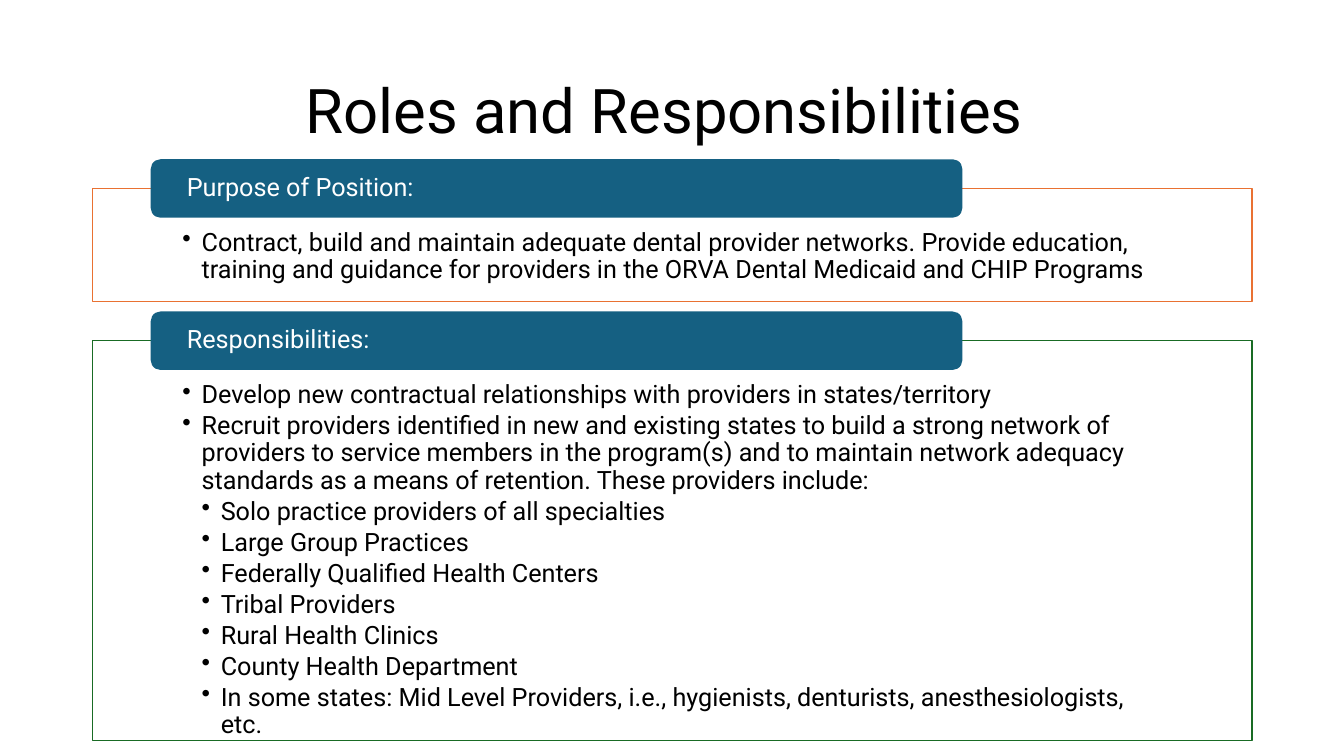
from lxml import etree
from pptx import Presentation
from pptx.dml.color import RGBColor
from pptx.enum.shapes import MSO_SHAPE
from pptx.enum.text import MSO_ANCHOR, MSO_AUTO_SIZE, PP_ALIGN
from pptx.oxml.ns import qn
from pptx.util import Inches, Pt

RECT, ROUNDED = MSO_SHAPE.RECTANGLE, MSO_SHAPE.ROUNDED_RECTANGLE
TOP, MIDDLE = MSO_ANCHOR.TOP, MSO_ANCHOR.MIDDLE
LEFT, CENTER = PP_ALIGN.LEFT, PP_ALIGN.CENTER

COLORS = {"white": "FFFFFF", "black": "000000", "label": "156082",
          "purpose": "E97132", "duties": "196B24"}
FONT = "Roboto"

# Grid in inches: both panels share one column, labels straddle their top edge
MARGIN, PANEL_W = 0.92, 11.5
LABEL_X, LABEL_W, LABEL_H = MARGIN + 0.05 * PANEL_W, 0.7 * PANEL_W, 0.58
BULLET_STEP = 0.19

# Heading, colour, top, height, bullets as (level, text)
SECTIONS = [
    ("Purpose of Position:", "purpose", 1.87, 1.12, [
        (1, "Contract, build and maintain adequate dental provider networks. "
            "Provide education, training and guidance for providers in the "
            "ORVA Dental Medicaid and CHIP Programs"),
    ]),
    ("Responsibilities:", "duties", 3.38, 3.97, [
        (1, "Develop new contractual relationships with providers in states/territory"),
        (1, "Recruit providers identified in new and existing states to build a "
            "strong network of providers to service members in the program(s) and "
            "to maintain network adequacy standards as a means of retention. "
            "These providers include:"),
        (2, "Solo practice providers of all specialties"),
        (2, "Large Group Practices"),
        (2, "Federally Qualified Health Centers"),
        (2, "Tribal Providers"),
        (2, "Rural Health Clinics"),
        (2, "County Health Department"),
        (2, "In some states: Mid Level Providers, i.e., hygienists, denturists, "
            "anesthesiologists, etc."),
    ]),
]


def color(name):
    return RGBColor.from_string(COLORS[name])


def write(p, text, size=18, fill="black", align=LEFT, after=0, level=0):
    """Fill one paragraph; a level above 0 gives it a bullet."""
    p.alignment, p.line_spacing, p.space_after = align, 0.9, Pt(after)
    if level:
        p.level = level
        pPr = p._p.get_or_add_pPr()
        pPr.set("marL", str(Inches(level * BULLET_STEP)))
        pPr.set("indent", str(-Inches(BULLET_STEP)))
        etree.SubElement(pPr, qn("a:buChar"), char="•")
    r = p.add_run()
    r.text = text
    r.font.name, r.font.size, r.font.color.rgb = FONT, Pt(size), color(fill)


def set_frame(tf, anchor, side, top=0, bottom=0):
    tf.word_wrap, tf.vertical_anchor = True, anchor
    tf.auto_size = MSO_AUTO_SIZE.NONE
    tf.margin_left = tf.margin_right = Inches(side)
    tf.margin_top, tf.margin_bottom = Inches(top), Inches(bottom)


def add_box(s, kind, x, y, w, h, fill, line=None):
    sp = s.shapes.add_shape(kind, Inches(x), Inches(y), Inches(w), Inches(h))
    sp.shadow.inherit = False
    sp.fill.solid()
    sp.fill.fore_color.rgb = color(fill)
    if line:
        sp.line.color.rgb, sp.line.width = color(line), Pt(1)
    else:
        sp.line.fill.background()
    return sp


def add_title(s, text):
    sp = s.shapes.title
    sp.left, sp.top = Inches(MARGIN), Inches(0.4)
    sp.width, sp.height = Inches(PANEL_W), Inches(1.45)
    set_frame(sp.text_frame, MIDDLE, side=0.1, top=0.05, bottom=0.05)
    write(sp.text_frame.paragraphs[0], text, size=44, align=CENTER)


def add_section(s, heading, line, top, height, bullets):
    # Outlined panel with its bullet list
    tf = add_box(s, RECT, MARGIN, top, PANEL_W, height, "white", line).text_frame
    set_frame(tf, TOP, side=0.89, top=0.41, bottom=0.14)
    for i, (level, text) in enumerate(bullets):
        p = tf.add_paragraph() if i else tf.paragraphs[0]
        write(p, text, after=2.7, level=level)
    # Heading label centred on the panel's top edge
    tf = add_box(s, ROUNDED, LABEL_X, top - LABEL_H / 2, LABEL_W, LABEL_H,
                 "label").text_frame
    set_frame(tf, MIDDLE, side=0.33)
    write(tf.paragraphs[0], heading, fill="white")


def main():
    prs = Presentation()
    prs.slide_width, prs.slide_height = Inches(13.33), Inches(7.5)
    s = prs.slides.add_slide(prs.slide_layouts[5])
    add_title(s, "Roles and Responsibilities ")
    for section in SECTIONS:
        add_section(s, *section)
    prs.save("out.pptx")


if __name__ == "__main__":
    main()
